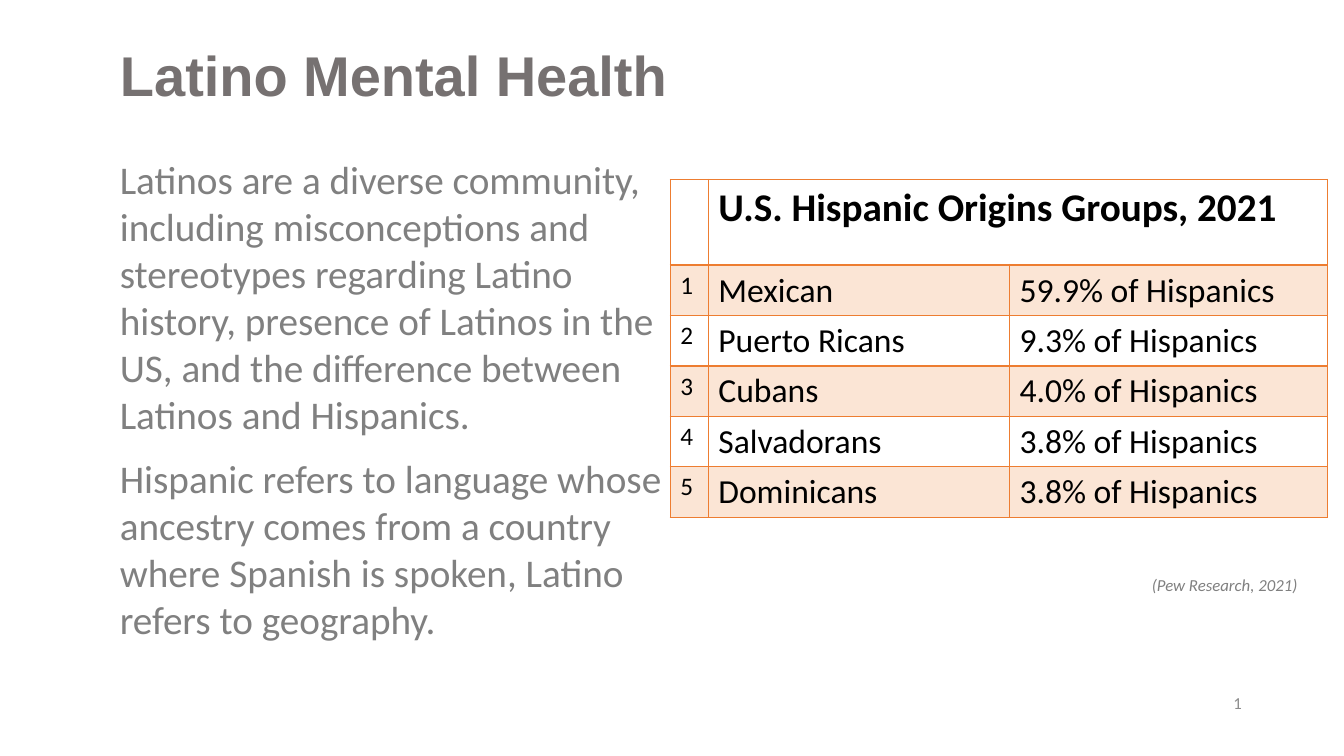
from lxml.etree import SubElement
from pptx import Presentation
from pptx.dml.color import RGBColor
from pptx.enum.text import MSO_ANCHOR, PP_ALIGN
from pptx.oxml import parse_xml
from pptx.oxml.ns import nsdecls, qn
from pptx.util import Cm, Pt

ORIGINS = [
    ("Mexican", "59.9% of Hispanics"),
    ("Puerto Ricans", "9.3% of Hispanics"),
    ("Cubans", "4.0% of Hispanics"),
    ("Salvadorans", "3.8% of Hispanics"),
    ("Dominicans", "3.8% of Hispanics"),
]
BODY = [
    "Latinos are a diverse community, including misconceptions and stereotypes "
    "regarding Latino history, presence of Latinos in the US, and the difference "
    "between Latinos and Hispanics.",
    "Hispanic refers to language whose ancestry comes from a country where "
    "Spanish is spoken, Latino refers to geography.",
]


def rgb(color):
    return RGBColor.from_string(color)


class Deck:
    font = "Calibri"
    title_color = "767171"
    gray = "808080"
    pale_gray = "8C8C8C"
    black = "000000"
    accent = "ED7D31"

    def __init__(self):
        self.prs = Presentation()
        self.prs.slide_width, self.prs.slide_height = Cm(33.87), Cm(19.05)
        self.s = self.prs.slides.add_slide(self.prs.slide_layouts[5])

    def style(self, p, size, color, font=None, bold=False, italic=False):
        for r in p.runs:
            r.font.name = font or self.font
            r.font.size = Pt(size)
            r.font.bold = bold
            r.font.italic = italic
            r.font.color.rgb = rgb(color)

    def title(self, text, x, y, w, h):
        sp = self.s.shapes.title
        sp.left, sp.top, sp.width, sp.height = Cm(x), Cm(y), Cm(w), Cm(h)
        tf = sp.text_frame
        tf.text = text
        tf.word_wrap = True
        tf.vertical_anchor = MSO_ANCHOR.MIDDLE
        p = tf.paragraphs[0]
        p.alignment = PP_ALIGN.LEFT
        p.line_spacing = 0.9
        self.style(p, 40, self.title_color, font="Arial", bold=True)

    def text(self, lines, x, y, w, h, size, color, italic=False, gap=0):
        tf = self.s.shapes.add_textbox(Cm(x), Cm(y), Cm(w), Cm(h)).text_frame
        tf.word_wrap = True
        tf.text = "\n".join(lines)
        for i, p in enumerate(tf.paragraphs):
            p.space_before = Pt(gap if i else 0)
            p.space_after = Pt(gap)
            self.style(p, size, color, italic=italic)
        return tf

    def slide_number(self, number, x, y, w, h):
        tf = self.text([number], x, y, w, h, 12, self.pale_gray)
        tf.vertical_anchor = MSO_ANCHOR.MIDDLE
        p = tf.paragraphs[0]
        p.alignment = PP_ALIGN.RIGHT
        fld = p.runs[0]._r
        fld.tag = qn("a:fld")
        fld.set("id", "{B6F15528-21DE-4FAA-801E-634DDDAF4B2B}")
        fld.set("type", "slidenum")

    def cell(self, cell, text, size, bold=False, shaded=False, bottom=1):
        cell.text = text
        self.style(cell.text_frame.paragraphs[0], size, self.black, bold=bold)
        if shaded:
            cell.fill.solid()
            cell.fill.fore_color.rgb = rgb(self.accent)
        else:
            cell.fill.background()
        tc_pr = cell._tc.get_or_add_tcPr()
        for clr in tc_pr.iter(qn("a:srgbClr")):
            SubElement(clr, qn("a:alpha"), val="20000")
        for i, side in enumerate("LRTB"):
            width = Pt(bottom if side == "B" else 1)
            tc_pr.insert(i, parse_xml(
                f'<a:ln{side} {nsdecls("a")} w="{width}"><a:solidFill>'
                f'<a:srgbClr val="{self.accent}"/></a:solidFill></a:ln{side}>'))

    def table(self, heading, rows, x, y, widths, head_h, row_h):
        height = head_h + row_h * len(rows)
        tbl = self.s.shapes.add_table(
            len(rows) + 1, len(widths), Cm(x), Cm(y), Cm(sum(widths)), Cm(height)).table
        for col, w in zip(tbl.columns, widths):
            col.width = Cm(w)
        for i, row in enumerate(tbl.rows):
            row.height = Cm(row_h if i else head_h)
        for j, text in enumerate(["", heading, ""]):
            self.cell(tbl.cell(0, j), text, 28, bold=True, bottom=2)
        tbl.cell(0, 1).merge(tbl.cell(0, 2))
        for i, (group, share) in enumerate(rows, 1):
            for j, (text, size) in enumerate([(str(i), 18), (group, 24), (share, 24)]):
                self.cell(tbl.cell(i, j), text, size, shaded=i % 2 == 1)


def main():
    d = Deck()
    d.title("Latino Mental Health", 2.77, 0.99, 28.04, 1.98)
    d.text(BODY, 2.77, 3.78, 14.53, 12.65, 28, d.gray, gap=6)
    tf = d.text(["(Pew Research, 2021)"], 28.78, 14.1, 4.67, 0.94, 12, d.gray, italic=True)
    tf.paragraphs[0].line_spacing = 1.5
    d.slide_number("14", 23.93, 17.2, 7.62, 1.02)
    d.table("U.S. Hispanic Origins Groups, 2021", ORIGINS,
            16.89, 4.52, [0.96, 7.59, 8.02], 2.16, 1.27)
    d.prs.save("out.pptx")


if __name__ == "__main__":
    main()
